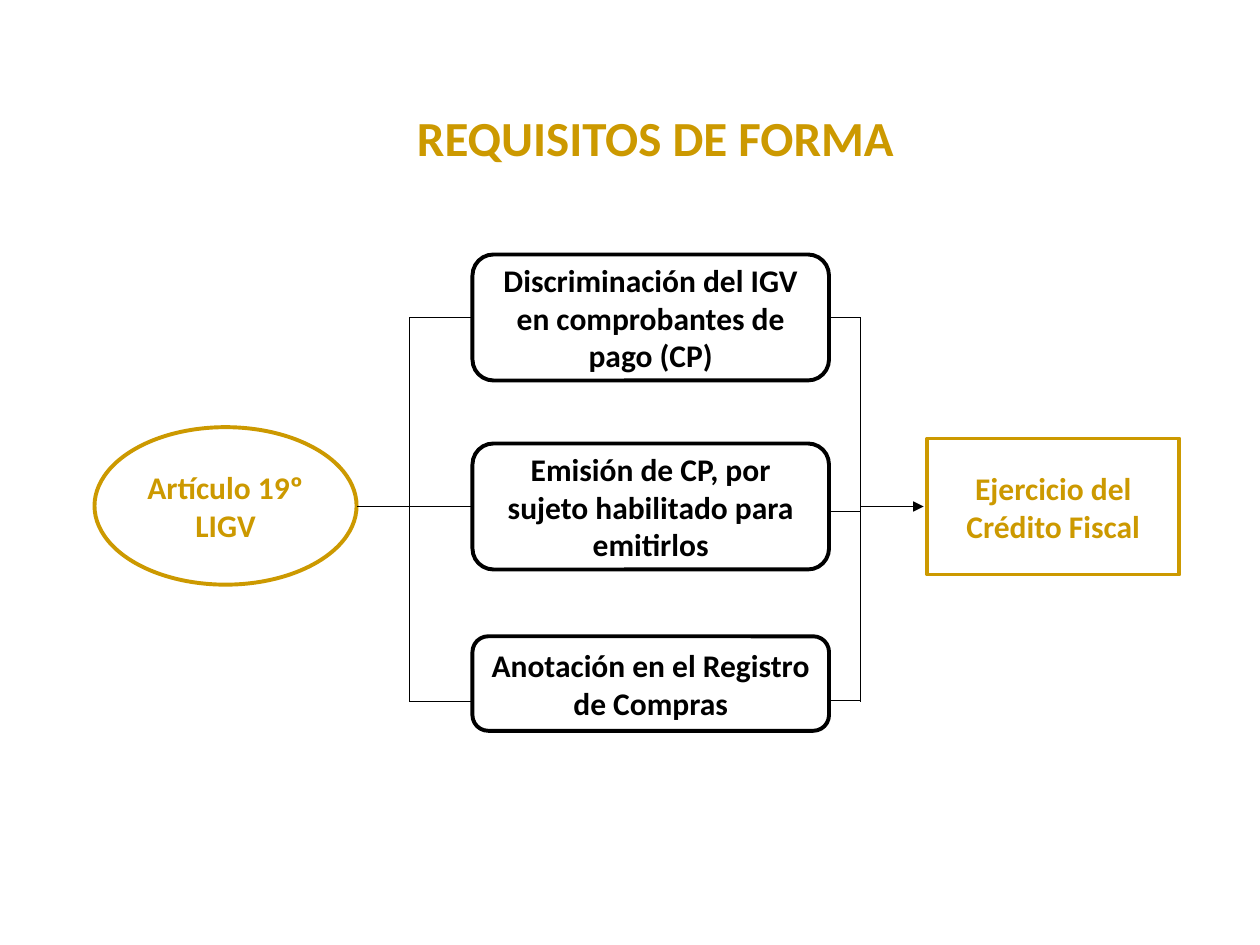
from lxml import etree
from pptx import Presentation
from pptx.dml.color import RGBColor
from pptx.enum.shapes import MSO_CONNECTOR, MSO_SHAPE
from pptx.enum.text import MSO_ANCHOR, MSO_AUTO_SIZE, PP_ALIGN
from pptx.oxml.ns import qn
from pptx.util import Inches, Pt

CENTER = PP_ALIGN.CENTER
TOP, MIDDLE = MSO_ANCHOR.TOP, MSO_ANCHOR.MIDDLE
NO_AUTOFIT = MSO_AUTO_SIZE.NONE
OVAL, RECTANGLE = MSO_SHAPE.OVAL, MSO_SHAPE.RECTANGLE
ROUNDED = MSO_SHAPE.ROUNDED_RECTANGLE
STRAIGHT = MSO_CONNECTOR.STRAIGHT

GOLD, BLACK, WHITE = "CC9900", "000000", "FFFFFF"
FONT = "Calibri"
TITLE_LAYOUT = 5

# Requirement boxes: text, top, height, left and right branch heights
REQUIREMENTS = [
    ("Discriminación del IGV\ven comprobantes de pago (CP)", 2.02, 1, 2.52, 2.52),
    ("Emisión de CP, por sujeto habilitado para emitirlos", 3.52, 1, 4.02, 4.06),
    ("Anotación en el Registro de Compras", 5.05, 0.75, 5.57, 5.56),
]
BOX_LEFT, BOX_WIDTH = 3.75, 2.83
BOX_RIGHT = BOX_LEFT + BOX_WIDTH
LEFT_TRUNK, RIGHT_TRUNK = 3.25, 6.83
AXIS = 4.02


def color(hex_string):
    return RGBColor.from_string(hex_string)


def write_text(frame, text, size, hex_string, anchor, wrap=True):
    frame.text = text
    frame.word_wrap = wrap
    frame.auto_size = NO_AUTOFIT
    frame.vertical_anchor = anchor
    for para in frame.paragraphs:
        para.alignment = CENTER
        for span in para.runs:
            span.font.name = FONT
            span.font.size = Pt(size)
            span.font.bold = True
            span.font.color.rgb = color(hex_string)


def place_title(page, left, top, width, height):
    title = page.shapes.title
    title.left, title.top = Inches(left), Inches(top)
    title.width, title.height = Inches(width), Inches(height)
    write_text(title.text_frame, "REQUISITOS DE FORMA", 28, GOLD, TOP)


def add_box(page, kind, text, hex_string, left, top, width, height, wrap=True):
    box = page.shapes.add_shape(
        kind, Inches(left), Inches(top), Inches(width), Inches(height))
    box.shadow.inherit = False
    box.fill.solid()
    box.fill.fore_color.rgb = color(WHITE)
    box.line.color.rgb = color(hex_string)
    box.line.width = Pt(2.25)
    write_text(box.text_frame, text, 18, hex_string, MIDDLE, wrap)


def add_line(page, x1, y1, x2, y2, arrow=False):
    line = page.shapes.add_connector(
        STRAIGHT, Inches(x1), Inches(y1), Inches(x2), Inches(y2))
    line.line.color.rgb = color(BLACK)
    line.line.width = Pt(0.75)
    if arrow:
        etree.SubElement(line.line._get_or_add_ln(), qn("a:tailEnd"), type="triangle")
    etree.SubElement(line._element.spPr, qn("a:effectLst"))


def add_requirements(page):
    for text, top, height, left_branch, right_branch in REQUIREMENTS:
        add_box(page, ROUNDED, text, BLACK, BOX_LEFT, top, BOX_WIDTH, height)
        add_line(page, LEFT_TRUNK, left_branch, BOX_LEFT, left_branch)
        add_line(page, BOX_RIGHT, right_branch, RIGHT_TRUNK, right_branch)
    # Vertical trunks joining the branches
    for trunk in (LEFT_TRUNK, RIGHT_TRUNK):
        add_line(page, trunk, REQUIREMENTS[0][3], trunk, REQUIREMENTS[-1][3])


def main():
    deck = Presentation()
    deck.slide_width, deck.slide_height = Inches(10), Inches(7.5)
    page = deck.slides.add_slide(deck.slide_layouts[TITLE_LAYOUT])
    place_title(page, 1.25, 0.8, 7.9, 0.57)

    # Legal source on the left
    add_box(page, OVAL, "Artículo 19º\nLIGV", GOLD, 0.75, 3.39, 2.08, 1.25, wrap=False)
    add_line(page, 2.83, AXIS, LEFT_TRUNK, AXIS)

    add_requirements(page)

    # Outcome on the right
    add_box(page, RECTANGLE, "Ejercicio del\nCrédito Fiscal", GOLD,
            7.36, 3.48, 2, 1.08, wrap=False)
    add_line(page, RIGHT_TRUNK, AXIS, 7.33, AXIS, arrow=True)

    deck.save("out.pptx")


if __name__ == "__main__":
    main()
